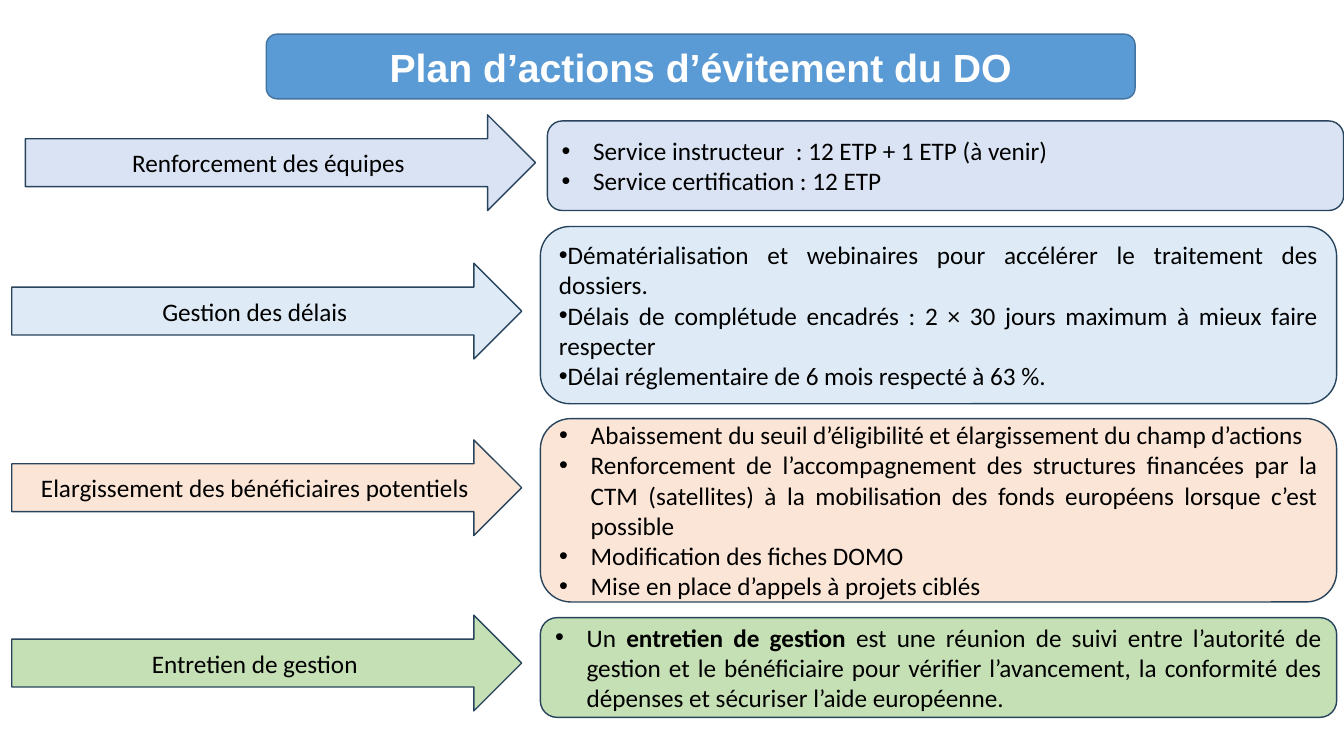
import pptx
import pptx.dml.color
import pptx.enum.shapes
import pptx.enum.text
import pptx.oxml.ns
import pptx.util
from lxml import etree

Pt = pptx.util.Pt
PRESET = pptx.enum.shapes.MSO_SHAPE
ALIGN = pptx.enum.text.PP_ALIGN


def rgb(value):
    return pptx.dml.color.RGBColor.from_string(value)


class ActionPlanSlide:
    """Draws the styled elements of the action plan on one slide."""

    font = "Calibri"
    size = 18
    ink = "000000"
    outline = "28445D"

    def __init__(self, slide):
        self.slide = slide

    def panel(self, preset, bounds, fill, outline):
        panel = self.slide.shapes.add_shape(preset, *[Pt(length) for length in bounds])
        panel.shadow.inherit = False
        panel.fill.solid()
        panel.fill.fore_color.rgb = rgb(fill)
        panel.line.color.rgb = rgb(outline)
        panel.line.width = Pt(1)
        panel.text_frame.word_wrap = True
        panel.text_frame.vertical_anchor = pptx.enum.text.MSO_ANCHOR.MIDDLE
        return panel.text_frame

    def add_words(self, paragraph, text, font=font, size=size, color=ink, bold=False):
        run = paragraph.add_run()
        run.text = text
        run.font.name = font
        run.font.size = Pt(size)
        run.font.bold = bold
        run.font.color.rgb = rgb(color)

    def bullet(self, paragraph, indent):
        properties = paragraph._p.get_or_add_pPr()
        properties.set("marL", str(Pt(indent)))
        properties.set("indent", str(-Pt(indent)))
        qn = pptx.oxml.ns.qn
        etree.SubElement(properties, qn("a:buFont")).set("typeface", "Arial")
        etree.SubElement(properties, qn("a:buChar")).set("char", "•")

    def title(self, text, bounds):
        frame = self.panel(PRESET.ROUNDED_RECTANGLE, bounds, "5B9BD5", "43739E")
        heading = frame.paragraphs[0]
        heading.alignment = ALIGN.CENTER
        self.add_words(heading, text, "Arial", 28, "FFFFFF", True)

    def arrow(self, text, left, top, fill):
        frame = self.panel(PRESET.RIGHT_ARROW, (left, top, 364.3, 68.4), fill, self.outline)
        label = frame.paragraphs[0]
        label.alignment = ALIGN.CENTER
        self.add_words(label, text)

    def details(self, items, left, top, height, fill, indent, alignment):
        bounds = (left, top, 568.8, height)
        frame = self.panel(PRESET.ROUNDED_RECTANGLE, bounds, fill, self.outline)
        for index, item in enumerate(items):
            paragraph = frame.add_paragraph() if index else frame.paragraphs[0]
            self.bullet(paragraph, indent)
            paragraph.alignment = alignment
            for part, text in enumerate(item):
                self.add_words(paragraph, text, bold=part == 1)


ACTIONS = [
    {
        "label": "Renforcement des équipes", "fill": "DAE3F3",
        "arrow": (18.2, 82), "box": (391, 86.4, 64),
        "indent": 22.5, "alignment": ALIGN.LEFT,
        "items": [
            ["Service instructeur  : 12 ETP + 1 ETP (à venir)"],
            ["Service certification : 12 ETP"],
        ],
    },
    {
        "label": "Gestion des délais", "fill": "DEEBF7",
        "arrow": (8.4, 188), "box": (386, 161.8, 126.6),
        "indent": 0, "alignment": ALIGN.JUSTIFY,
        "items": [
            ["Dématérialisation et webinaires pour accélérer le traitement des dossiers."],
            ["Délais de complétude encadrés : 2 × 30 jours maximum à mieux faire respecter"],
            ["Délai réglementaire de 6 mois respecté à 63 %."],
        ],
    },
    {
        "label": "Elargissement des bénéficiaires potentiels", "fill": "FBE5D6",
        "arrow": (8.4, 314.2), "box": (386, 299, 131),
        "indent": 22.5, "alignment": ALIGN.JUSTIFY,
        "items": [
            ["Abaissement du seuil d’éligibilité et élargissement du champ d’actions"],
            ["Renforcement de l’accompagnement des structures financées par la CTM "
             "(satellites) à la mobilisation des fonds européens lorsque c’est possible"],
            ["Modification des fiches DOMO"],
            ["Mise en place d’appels à projets ciblés"],
        ],
    },
    {
        "label": "Entretien de gestion", "fill": "C5E0B4",
        "arrow": (8.4, 439.4), "box": (386, 441.2, 71.2),
        "indent": 22.5, "alignment": ALIGN.JUSTIFY,
        "items": [
            ["Un ", "entretien de gestion",
             " est une réunion de suivi entre l’autorité de gestion et le bénéficiaire "
             "pour vérifier l’avancement, la conformité des dépenses et sécuriser "
             "l’aide européenne."],
        ],
    },
]


def main():
    deck = pptx.Presentation()
    deck.slide_width = Pt(960)
    deck.slide_height = Pt(540)
    plan = ActionPlanSlide(deck.slides.add_slide(deck.slide_layouts[6]))
    plan.title("Plan d’actions d’évitement du DO", (190.2, 24.4, 620.6, 46.2))
    for action in ACTIONS:
        plan.details(action["items"], *action["box"], action["fill"],
                     action["indent"], action["alignment"])
        plan.arrow(action["label"], *action["arrow"], action["fill"])
    deck.save("out.pptx")


if __name__ == "__main__":
    main()
